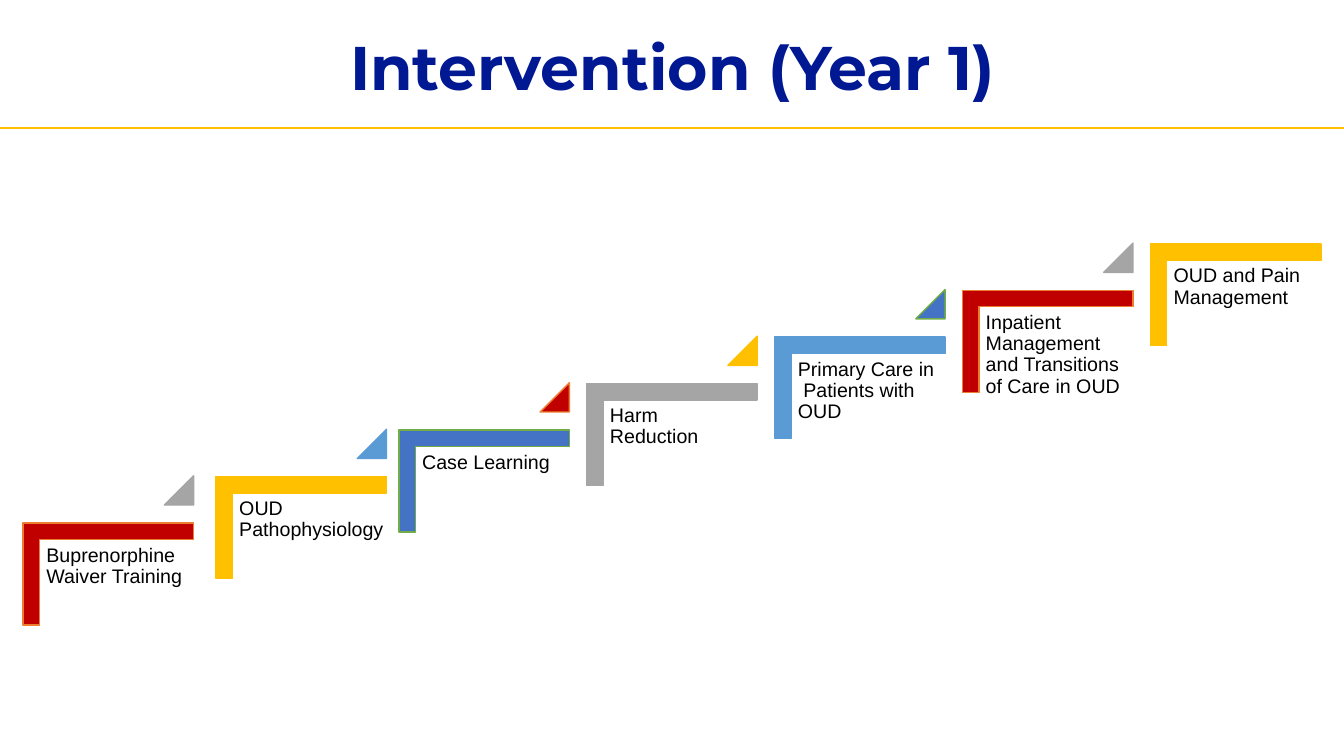
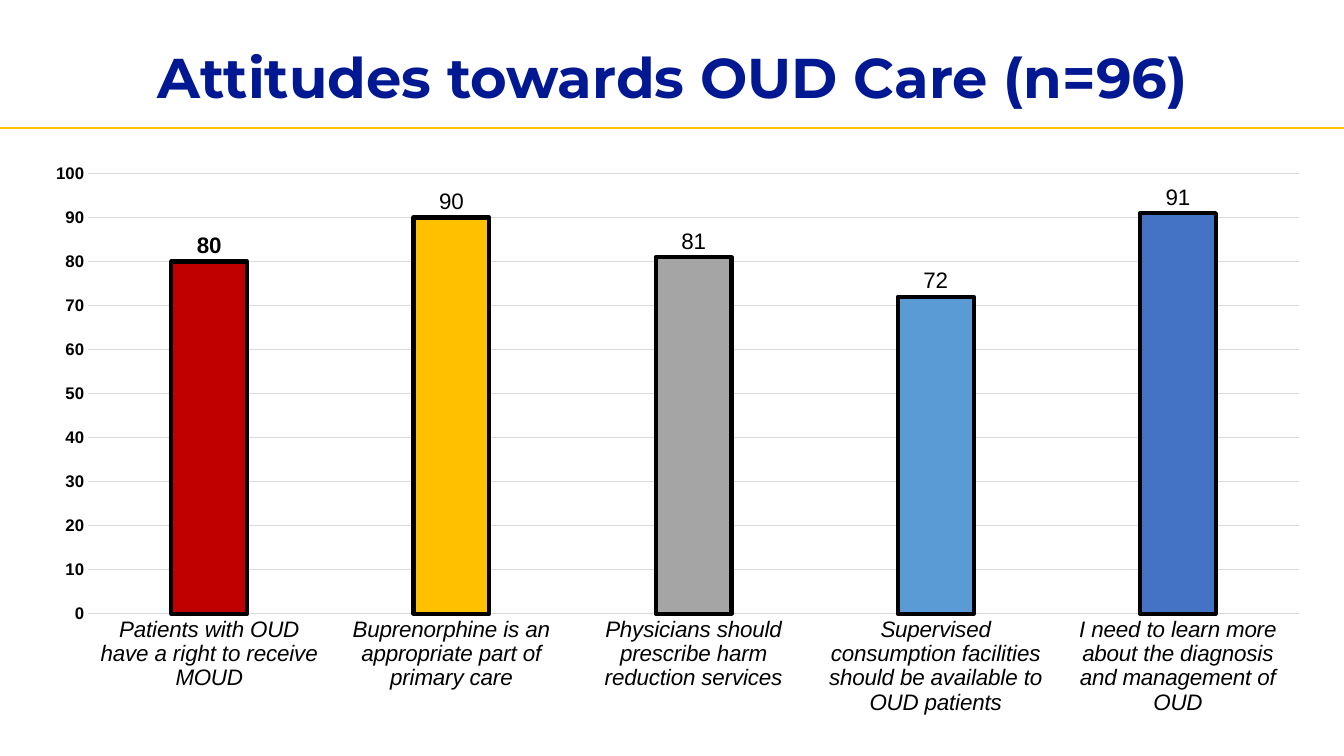
"""Build the training steps and attitudes slides."""
from dataclasses import dataclass

from lxml import etree
from pptx import Presentation
from pptx import util as u
from pptx.chart import data as cd
from pptx.dml import color as dc
from pptx.enum import chart as ch
from pptx.enum import shapes, text
from pptx.oxml import ns


@dataclass(frozen=True)
class Theme:
    """Colours, fonts and type sizes."""
    navy: str = "011893"
    gold: str = "FFC000"
    red: str = "C00000"
    rust: str = "ED7D31"
    grey: str = "A5A5A5"
    sky: str = "5B9BD5"
    blue: str = "4472C4"
    green: str = "70AD47"
    black: str = "000000"
    grid: str = "D9D9D9"
    head: str = "Montserrat"
    body: str = "Arial"
    big: int = 44
    title: int = 40
    label: int = 16
    step: int = 14
    tick: int = 12
    base: int = 10


T = Theme()


def rgb(code):
    """Turn a hex code into a colour."""
    return dc.RGBColor.from_string(code)


def style(font, size, face=T.body, color=T.black, bold=False, slant=False):
    """Set the look of a font."""
    font.name, font.size = face, u.Pt(size)
    font.bold, font.italic = bold, slant
    font.color.rgb = rgb(color)


def stroke(line, color, width):
    """Set the colour and width of a line."""
    line.color.rgb = rgb(color)
    line.width = u.Pt(width)


def fill(part, color):
    """Give a part a solid fill."""
    part.fill.solid()
    part.fill.fore_color.rgb = rgb(color)


def write(frame, words, align=text.PP_ALIGN.LEFT, **look):
    """Put one styled paragraph in a text frame."""
    para = frame.paragraphs[0]
    para.alignment, para.line_spacing = align, 0.9
    run = para.add_run()
    run.text = words
    style(run.font, **look)


class Deck:
    """Hold the show and its current slide."""

    def __init__(self):
        """Start an empty wide show."""
        self.show = Presentation()
        self.show.slide_width = u.Inches(13.33)
        self.show.slide_height = u.Inches(7.5)

    def page(self, words, top, high, size):
        """Add a slide with its rule and title."""
        self.slide = self.show.slides.add_slide(self.show.slide_layouts[6])
        self.rule(1.27)
        frame = self.box(0.92, top, 11.5, high)
        frame.vertical_anchor = text.MSO_ANCHOR.MIDDLE
        write(frame, words, text.PP_ALIGN.CENTER, size=size,
              face=T.head, color=T.navy, bold=True)

    def rule(self, y):
        """Draw a gold line across the slide."""
        line = self.slide.shapes.add_connector(
            shapes.MSO_CONNECTOR.STRAIGHT, 0, u.Inches(y),
            self.show.slide_width, u.Inches(y))
        stroke(line.line, T.gold, 1.5)
        etree.SubElement(line._element.spPr, ns.qn("a:effectLst"))

    def box(self, x, y, wide, high, inset=None):
        """Add a text box and return its frame."""
        frame = self.slide.shapes.add_textbox(
            *map(u.Inches, (x, y, wide, high))).text_frame
        frame.word_wrap = True
        if inset is not None:
            frame.margin_left = frame.margin_right = u.Inches(inset)
            frame.margin_top = frame.margin_bottom = u.Inches(inset)
        return frame

    def shape(self, kind, x, y, wide, high, paint, adjust, turn=0):
        """Add a filled and outlined shape."""
        item = self.slide.shapes.add_shape(
            kind, *map(u.Inches, (x, y, wide, high)))
        item.shadow.inherit = False
        item.rotation = turn
        for i, value in enumerate(adjust):
            item.adjustments[i] = value
        fill(item, paint[0])
        stroke(item.line, paint[1], 1)

    def step(self, x, y, words, paint, wide=1.52):
        """Draw one stair with its label."""
        self.shape(shapes.MSO_SHAPE.CORNER, x, y, 1.01, 1.69,
                   paint, (0.161, 0.161), 90)
        write(self.box(x - 0.17, y + 0.5, wide, 1.33, 0.06),
              words, size=T.step)

    def mark(self, x, y, paint):
        """Draw the small triangle above a stair."""
        self.shape(shapes.MSO_SHAPE.ISOSCELES_TRIANGLE, x + 1.06, y - 0.13,
                   0.29, 0.29, paint, (1,))

    def bars(self, cats, vals, paints):
        """Add a column chart with a colour per bar."""
        data = cd.CategoryChartData(number_format="General")
        data.categories = cats
        data.add_series("Series 1", vals)
        chart = self.slide.shapes.add_chart(
            ch.XL_CHART_TYPE.COLUMN_CLUSTERED,
            *map(u.Inches, (0.3, 1.52, 12.84, 5.68)), data).chart
        chart.has_title = chart.has_legend = False
        style(chart.font, T.base)
        self.axes(chart)
        plot = chart.plots[0]
        plot.gap_width, plot.overlap = 219, -27
        plot.vary_by_categories = False
        row = plot.series[0]
        fill(row.format, paints[-1])
        stroke(row.format.line, T.black, 3)
        for i, paint in enumerate(paints):
            form = row.points[i].format
            fill(form, paint)
            stroke(form.line, T.black, 3)
        tags = row.data_labels
        tags.show_value = True
        first = row.points[0].data_label
        for tag, bold in ((tags, False), (first, True)):
            style(tag.font, T.label, bold=bold)
            tag.position = ch.XL_LABEL_POSITION.OUTSIDE_END

    def axes(self, chart):
        """Style both axes of a chart."""
        cat, val = chart.category_axis, chart.value_axis
        for axis in (cat, val):
            axis.major_tick_mark = ch.XL_TICK_MARK.NONE
            axis.minor_tick_mark = ch.XL_TICK_MARK.NONE
        style(cat.tick_labels.font, T.label, slant=True)
        style(val.tick_labels.font, T.tick, bold=True)
        stroke(cat.format.line, T.grid, 0.75)
        val.format.line.fill.background()
        val.has_major_gridlines = True
        stroke(val.major_gridlines.format.line, T.grid, 0.75)
        val.minimum_scale, val.maximum_scale, val.major_unit = 0, 100, 10


def stairs(deck):
    """Build the slide of rising steps."""
    deck.page("Intervention (Year 1)", 0, 1.4, T.big)
    red, blue = (T.red, T.rust), (T.blue, T.green)
    gold, grey, sky = ((c, c) for c in (T.gold, T.grey, T.sky))
    steps = [
        ("Buprenorphine Waiver Training", red, grey),
        ("OUD Pathophysiology", gold, sky),
        ("Case Learning", blue, red),
        ("Harm Reduction", grey, gold),
        ("Primary Care in  Patients with OUD", sky, blue),
        ("Inpatient Management and Transitions of Care in OUD", red, grey),
        ("OUD and Pain Management", gold, None),
    ]
    last = len(steps) - 1
    for i, (words, paint, tip) in enumerate(steps):
        x, y = 0.57 + 11.18 * i / last, 4.85 - 2.77 * i / last
        wide = 1.52
        if i == 1:
            x, wide = x + 0.05, 1.96
        deck.step(x, y, words, paint, wide)
        if tip:
            deck.mark(x, y, tip)


def views(deck):
    """Build the slide of attitudes."""
    deck.page("Attitudes towards OUD Care (n=96)", 0.07, 1.45, T.title)
    rows = [
        ("Patients with OUD have a right to receive MOUD", 80, T.red),
        ("Buprenorphine is an appropriate part of primary care", 90, T.gold),
        ("Physicians should prescribe harm reduction services", 81, T.grey),
        ("Supervised consumption facilities should be available to "
         "OUD patients", 72, T.sky),
        ("I need to learn more about the diagnosis and management of OUD",
         91, T.blue),
    ]
    deck.bars(*zip(*rows))


def main():
    """Build and save the show."""
    deck = Deck()
    stairs(deck)
    views(deck)
    deck.show.save("out.pptx")


if __name__ == "__main__":
    main()
